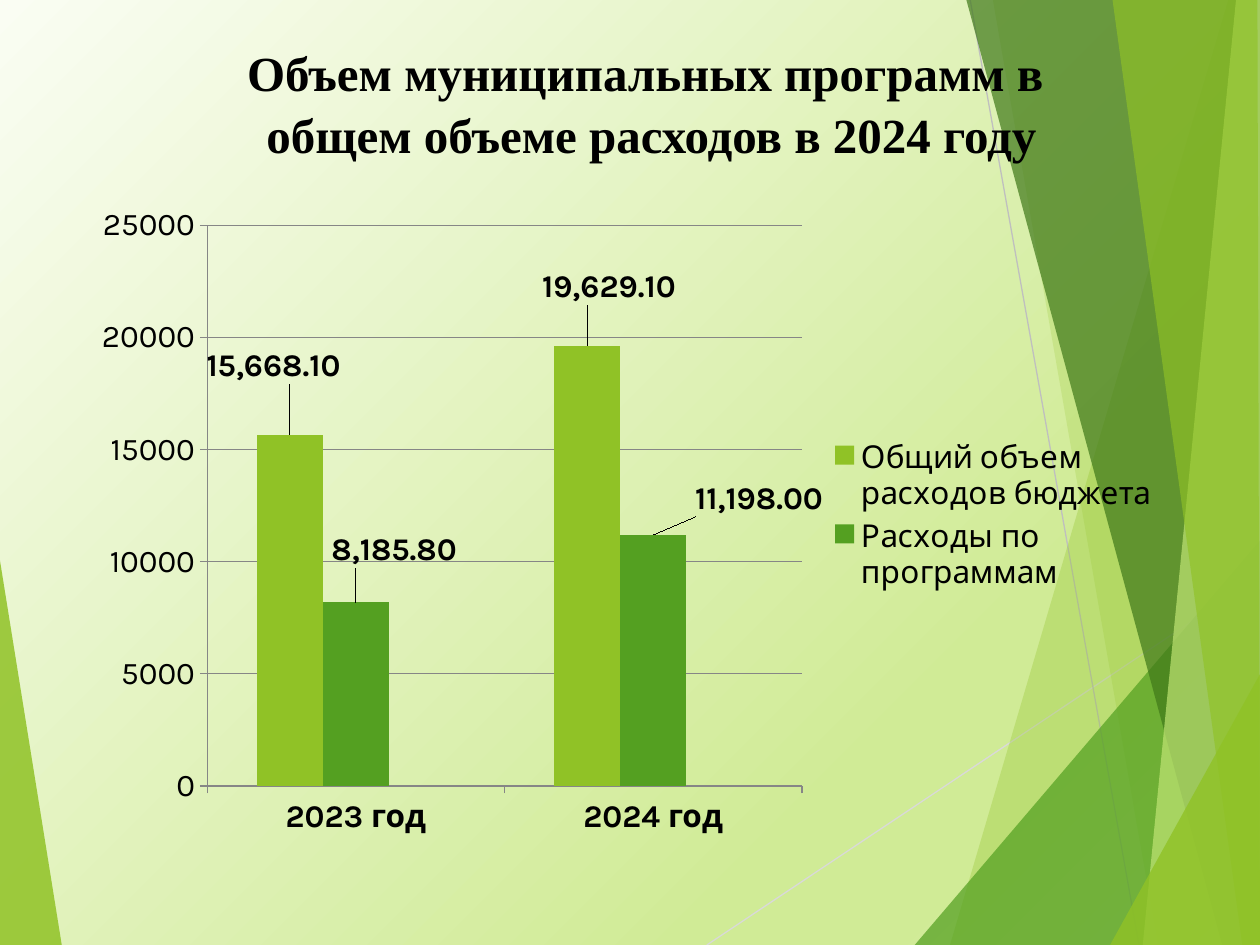
from lxml import etree
from pptx import Presentation
from pptx.chart.data import CategoryChartData
from pptx.dml.color import RGBColor
from pptx.enum.chart import XL_CHART_TYPE as ChartType, XL_LABEL_POSITION as LabelPos
from pptx.enum.chart import XL_LEGEND_POSITION as LegendPos, XL_TICK_MARK as Tick
from pptx.enum.shapes import MSO_CONNECTOR as Connector
from pptx.enum.text import MSO_ANCHOR as Anchor, MSO_AUTO_SIZE as AutoSize, PP_ALIGN as Align
from pptx.oxml import parse_xml
from pptx.oxml.ns import nsdecls, qn
from pptx.util import Inches, Pt

WIDTH, HEIGHT = 10, 7.5
BLACK = RGBColor(0x00, 0x00, 0x00)
GREY = RGBColor(0x86, 0x86, 0x86)
SILVER = RGBColor(0xBF, 0xBF, 0xBF)
PALE = RGBColor(0xD9, 0xD9, 0xD9)
LIME = RGBColor(0x90, 0xC2, 0x26)
GREEN = RGBColor(0x54, 0xA0, 0x21)
FOREST = RGBColor(0x3F, 0x78, 0x19)
MINT = RGBColor(0xC0, 0xE4, 0x74)
GOLD = RGBColor(0xE6, 0xB9, 0x1E)
BACKDROP = [(0, RGBColor(0xFA, 0xFD, 0xF3)), (74, RGBColor(0xD0, 0xEB, 0x96)),
            (83, RGBColor(0xD0, 0xEB, 0x96)), (100, RGBColor(0xDF, 0xF1, 0xB9))]

LEFT_SHARD = [([(0, 4.45), (0.49, HEIGHT), (0, HEIGHT)], LIME, 85)]
RAYS = [((5.61, HEIGHT), (WIDTH, 4.57), PALE), ((7.7, 0), (9.04, HEIGHT), SILVER)]
RIGHT_SHARDS = [
    ([(9.75, 0), (7.54, HEIGHT), (WIDTH, HEIGHT), (WIDTH, 0)], LIME, 30),
    ([(7.88, 0), (9.19, HEIGHT), (WIDTH, HEIGHT), (WIDTH, 0)], LIME, 20),
    ([(7.26, HEIGHT), (WIDTH, 4.29), (WIDTH, HEIGHT)], GREEN, 72),
    ([(7.67, 0), (9.7, HEIGHT), (WIDTH, HEIGHT), (WIDTH, 0)], FOREST, 70),
    ([(9.81, 0), (9.07, HEIGHT), (WIDTH, HEIGHT), (WIDTH, 0)], MINT, 70),
    ([(8.83, 0), (9.86, HEIGHT), (WIDTH, HEIGHT), (9.98, 0)], LIME, 65),
    ([(8.81, HEIGHT), (WIDTH, 5.35), (WIDTH, HEIGHT)], LIME, 80),
]

TITLE = ["Объем муниципальных программ в ", "общем объеме расходов в 2024 году"]
YEARS = ["2023 год", "2024 год"]
SERIES = [
    ("Общий объем расходов бюджета", [15668.1, 19629.1], LIME, [(-0.015, -0.07), (0.02, -0.055)]),
    ("Расходы по программам", [8185.8, 11198], GREEN, [(0.035, -0.045), (0.097, -0.02)]),
    ("Series 3", [None, None], GOLD, []),
]
LABEL_FORMAT = "#,##0.00"


def share_box(left, top, width, height):
    return [Inches(share * side) for share, side in
            zip((left, top, width, height), (WIDTH, HEIGHT, WIDTH, HEIGHT))]


def apply(target, formats):
    for name, value in formats.items():
        setattr(target, name, value)


def paint_background(page):
    fill = page.background.fill
    fill.gradient()
    fill.gradient_angle = 315
    stops = next(page.element.iter(qn("a:gsLst")))
    for stop in list(stops):
        stops.remove(stop)
    for place, color in BACKDROP:
        stop = etree.SubElement(stops, qn("a:gs"), pos=str(place * 1000))
        etree.SubElement(stop, qn("a:srgbClr"), val=str(color))


def draw_shards(page, shards):
    for points, color, opacity in shards:
        corners = [(Inches(x), Inches(y)) for x, y in points]
        builder = page.shapes.build_freeform(*corners[0])
        builder.add_line_segments(corners[1:], close=True)
        shard = builder.convert_to_shape()
        shard.shadow.inherit = False
        shard.line.fill.background()
        shard.fill.solid()
        shard.fill.fore_color.rgb = color
        tint = shard.element.spPr.find(qn("a:solidFill"))[0]
        etree.SubElement(tint, qn("a:alpha"), val=str(opacity * 1000))


def draw_rays(page, rays):
    for start, end, color in rays:
        ray = page.shapes.add_connector(Connector.STRAIGHT, *map(Inches, start + end))
        ray.line.color.rgb = color
        ray.line.width = Pt(0.75)
        etree.SubElement(ray.element.spPr, qn("a:effectLst"))


def place_title(page, box):
    title = page.shapes.title
    page.shapes.element.append(title.element)
    apply(title, dict(zip(("left", "top", "width", "height"), box)))
    frame = title.text_frame
    apply(frame, {"word_wrap": True, "auto_size": AutoSize.NONE,
                  "vertical_anchor": Anchor.TOP, "margin_top": Inches(0.09)})
    for index, text in enumerate(TITLE):
        para = frame.add_paragraph() if index else frame.paragraphs[0]
        apply(para, {"alignment": Align.CENTER, "space_before": Pt(1.5 * index)})
        span = para.add_run()
        span.text = text
        apply(span.font, {"size": Pt(28), "name": "Times New Roman", "bold": True})
        span.font.color.rgb = BLACK


def manual_layout(inner=False, **shares):
    parts = '<c:layoutTarget val="inner"/>' if inner else ""
    if "w" in shares:
        parts += '<c:xMode val="edge"/><c:yMode val="edge"/>'
    parts += "".join(f'<c:{name} val="{value}"/>' for name, value in shares.items())
    return parse_xml(f'<c:layout {nsdecls("c")}><c:manualLayout>{parts}</c:manualLayout></c:layout>')


def label_series(series, offsets):
    labels = series.data_labels
    apply(labels, {"show_value": True, "number_format": LABEL_FORMAT,
                   "number_format_is_linked": False})
    labels.font.bold = True
    for index, (x, y) in enumerate(offsets):
        label = series.points[index].data_label
        apply(label.font, {"bold": True, "size": Pt(18), "name": "Karla"})
        label.font.color.rgb = BLACK
        label.position = LabelPos.OUTSIDE_END
        entry = labels._element.findall(qn("c:dLbl"))[index]
        entry.insert(1, manual_layout(x=x, y=y))
        entry.insert(2, parse_xml(f'<c:numFmt {nsdecls("c")} formatCode="{LABEL_FORMAT}" sourceLinked="0"/>'))


def format_axes(chart):
    for axis in (chart.category_axis, chart.value_axis):
        axis.major_tick_mark = Tick.OUTSIDE
        axis.format.line.color.rgb = GREY
    chart.category_axis.tick_labels.font.bold = True
    values = chart.value_axis
    apply(values, {"minimum_scale": 0, "maximum_scale": 25000, "major_unit": 5000,
                   "has_major_gridlines": True})
    values.major_gridlines.format.line.color.rgb = GREY
    apply(values.tick_labels, {"number_format": "General", "number_format_is_linked": False})


def format_legend(chart):
    chart.has_legend = True
    apply(chart.legend, {"position": LegendPos.RIGHT, "include_in_layout": False})
    legend = chart.legend._element
    for old in legend.findall(qn("c:layout")):
        legend.remove(old)
    legend.insert(1, parse_xml(f'<c:legendEntry {nsdecls("c")}><c:idx val="2"/><c:delete val="1"/></c:legendEntry>'))
    legend.insert(2, manual_layout(x=0.68, y=0.37, w=0.31, h=0.25))


def place_chart(page, box):
    data = CategoryChartData(number_format=LABEL_FORMAT)
    data.categories = YEARS
    for name, values, *rest in SERIES:
        data.add_series(name, values)
    chart = page.shapes.add_chart(ChartType.COLUMN_CLUSTERED, *box, data).chart
    chart.has_title = False
    apply(chart.font, {"size": Pt(18), "name": "Karla"})
    chart.font.color.rgb = BLACK
    plot = chart.plots[0]
    apply(plot, {"gap_width": 150, "overlap": 0, "vary_by_categories": False})
    for series, (name, values, color, offsets) in zip(plot.series, SERIES):
        series.format.fill.solid()
        series.format.fill.fore_color.rgb = color
        if offsets:
            label_series(series, offsets)
    format_axes(chart)
    format_legend(chart)
    area = next(chart._chartSpace.iter(qn("c:plotArea")))
    for old in area.findall(qn("c:layout")):
        area.remove(old)
    area.insert(0, manual_layout(inner=True, x=0.115, y=0.05, w=0.545, h=0.86))


def main():
    deck = Presentation()
    apply(deck, {"slide_width": Inches(WIDTH), "slide_height": Inches(HEIGHT)})
    page = deck.slides.add_slide(deck.slide_layouts[5])
    paint_background(page)
    draw_shards(page, LEFT_SHARD)
    draw_rays(page, RAYS)
    draw_shards(page, RIGHT_SHARDS)
    place_title(page, share_box(0.067, 0.033, 0.9, 0.167))
    place_chart(page, share_box(0.065, 0.204, 0.866, 0.69))
    deck.save("out.pptx")


if __name__ == "__main__":
    main()
